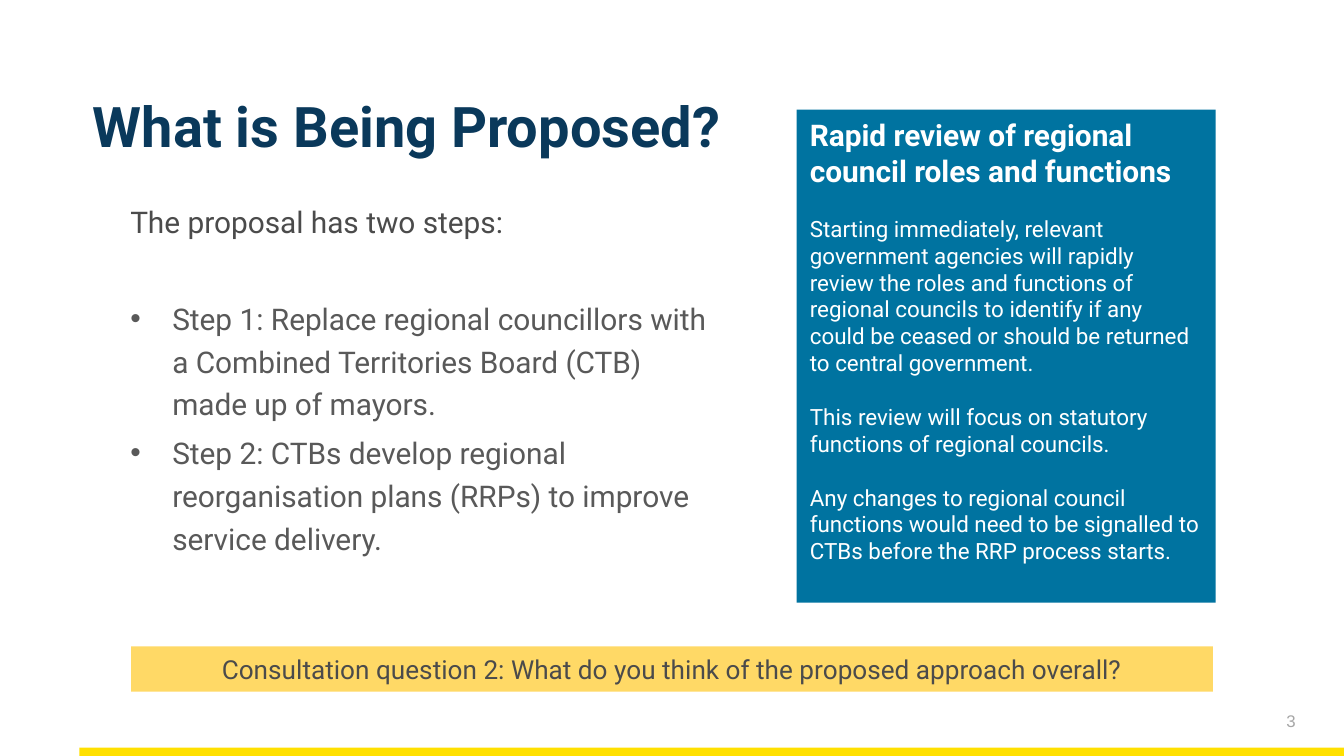
from dataclasses import dataclass
from typing import Optional

from lxml import etree
from pptx import Presentation
from pptx.dml.color import RGBColor
from pptx.enum.shapes import MSO_SHAPE
from pptx.enum.text import MSO_ANCHOR, MSO_AUTO_SIZE, PP_ALIGN
from pptx.oxml.ns import qn
from pptx.util import Pt

RECTANGLE = MSO_SHAPE.RECTANGLE
TOP, MIDDLE = MSO_ANCHOR.TOP, MSO_ANCHOR.MIDDLE
LEFT, CENTER, RIGHT = PP_ALIGN.LEFT, PP_ALIGN.CENTER, PP_ALIGN.RIGHT
NO_FIT = MSO_AUTO_SIZE.NONE

COLORS = {
    "navy": "0A395B",
    "dark": "4B4B4B",
    "gray": "595959",
    "pale": "A6A6A6",
    "white": "FFFFFF",
    "blue": "0073A0",
    "sand": "FFD966",
    "yellow": "FFE000",
}
BULLET_INDENT = Pt(22.5)


@dataclass(frozen=True)
class Area:
    left: float
    top: float
    width: float
    height: float


@dataclass(frozen=True)
class Line:
    text: str
    size: float
    color: str
    bold: bool = False
    font: str = "Roboto"
    align: int = LEFT
    spacing: Optional[object] = None
    after: float = 0
    bullet: bool = False


def place(box, area: Area) -> None:
    box.left, box.top = Pt(area.left), Pt(area.top)
    box.width, box.height = Pt(area.width), Pt(area.height)


def set_bullet(para, bullet: bool) -> None:
    properties = para._p.get_or_add_pPr()
    indent = BULLET_INDENT if bullet else 0
    properties.set("marL", str(indent))
    properties.set("indent", str(-indent))
    if bullet:
        font = etree.SubElement(properties, qn("a:buFont"))
        font.set("typeface", "Arial")
        etree.SubElement(properties, qn("a:buChar")).set("char", "•")
    else:
        etree.SubElement(properties, qn("a:buNone"))


def write(box, lines: list[Line], anchor=TOP) -> None:
    frame = box.text_frame
    frame.word_wrap = True
    frame.auto_size = NO_FIT
    frame.vertical_anchor = anchor
    for index, line in enumerate(lines):
        para = frame.add_paragraph() if index else frame.paragraphs[0]
        set_bullet(para, line.bullet)
        para.alignment = line.align
        para.space_before = Pt(0)
        para.space_after = Pt(line.after)
        if line.spacing is not None:
            para.line_spacing = line.spacing
        span = para.add_run()
        span.text = line.text
        span.font.name = line.font
        span.font.size = Pt(line.size)
        span.font.bold = line.bold
        span.font.color.rgb = RGBColor.from_string(COLORS[line.color])


def add_block(page, area: Area, color: str):
    block = page.shapes.add_shape(RECTANGLE, 0, 0, 0, 0)
    place(block, area)
    block.shadow.inherit = False
    block.fill.solid()
    block.fill.fore_color.rgb = RGBColor.from_string(COLORS[color])
    block.line.fill.background()
    return block


def step(text: str) -> Line:
    return Line(text, 16, "gray", spacing=Pt(23), after=3, bullet=True)


def note(text: str, after: float = 14.4) -> Line:
    return Line(text, 12, "white", after=after)


def main() -> None:
    deck = Presentation()
    deck.slide_width, deck.slide_height = Pt(720), Pt(405)
    page = deck.slides.add_slide(deck.slide_layouts[1])

    add_block(page, Area(42.5, 400.5, 677.5, 5.75), "yellow")

    title = page.shapes.title
    place(title, Area(42.5, 54.7, 627.8, 29.5))
    write(title, [Line("What is Being Proposed?", 30, "navy", bold=True, spacing=0.9)], MIDDLE)

    body = page.placeholders[1]
    place(body, Area(62.6, 101.5, 329.8, 202.3))
    write(body, [
        Line("The proposal has two steps:", 16, "dark", spacing=Pt(23), after=29),
        step("Step 1: Replace regional councillors with a Combined Territories Board (CTB) "
             "made up of mayors."),
        step("Step 2: CTBs develop regional reorganisation plans (RRPs) to improve "
             "service delivery."),
    ])

    number = page.shapes.add_textbox(0, 0, 0, 0)
    place(number, Area(539.3, 375.1, 162, 21.6))
    write(number, [Line("3", 9, "pale", font="Arial", align=RIGHT)], MIDDLE)

    question = add_block(page, Area(70.2, 346.3, 579.6, 24.2), "sand")
    write(question, [Line(
        "Consultation question 2: What do you think of the proposed approach overall?",
        14, "dark", align=CENTER)], MIDDLE)

    review = add_block(page, Area(426.8, 58.8, 224.5, 264.1), "blue")
    write(review, [
        Line("Rapid review of regional council roles and functions", 16, "white",
             bold=True, after=14.4),
        note("Starting immediately, relevant government agencies will rapidly review the roles "
             "and functions of regional councils to identify if any could be ceased or should "
             "be returned to central government."),
        note("This review will focus on statutory functions of regional councils."),
        note("Any changes to regional council functions would need to be signalled to CTBs "
             "before the RRP process starts.", after=0),
    ])

    deck.save("out.pptx")


if __name__ == "__main__":
    main()
